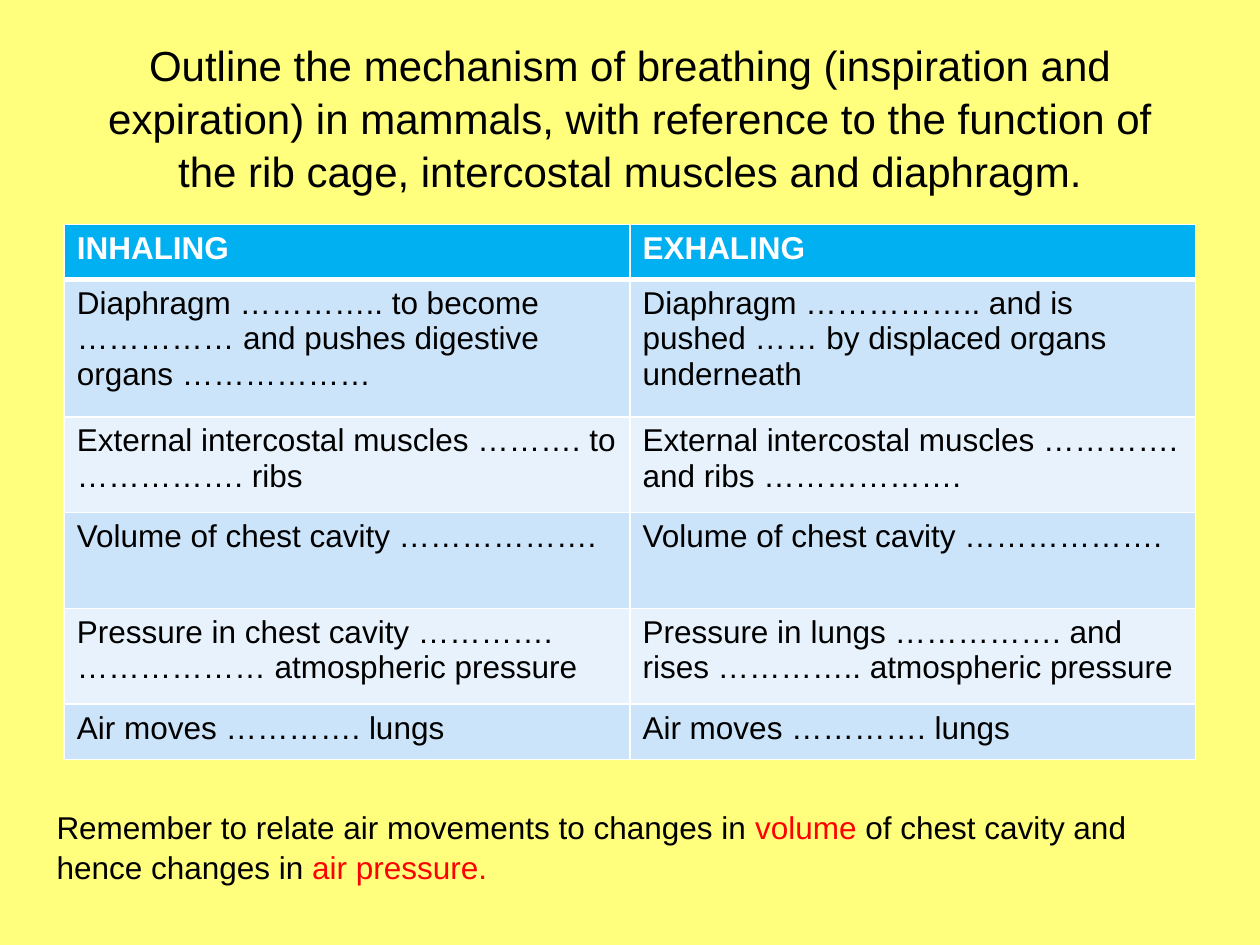
from dataclasses import dataclass
from typing import NamedTuple

from lxml.etree import SubElement as Sub
from pptx import Presentation
from pptx.dml.color import RGBColor as Rgb
from pptx.enum.text import MSO_ANCHOR as Anchor, MSO_AUTO_SIZE as Fit, PP_ALIGN as Align
from pptx.oxml.ns import qn
from pptx.util import Inches, Pt


@dataclass(frozen=True)
class Theme:
    font: str = "Arial"
    page: str = "FFFF7D"
    ink: str = "000000"
    mark: str = "FF0000"
    white: str = "FFFFFF"
    head: str = "00B0F0"
    bands: tuple = ("E7F2FC", "CCE4F9")
    title: int = 24
    body: int = 18
    lead: float = 1.05


class Row(NamedTuple):
    high: float
    left: str
    right: str


class Part(NamedTuple):
    text: str
    color: str


LOOK = Theme()
WIDE, HIGH = 10, 7.5

ROWS = [
    Row(0.44, "INHALING", "EXHALING"),
    Row(1.09, "Diaphragm ………….. to become …………… and pushes digestive organs ………………",
        "Diaphragm …………….. and is pushed …… by displaced organs underneath"),
    Row(0.76, "External intercostal muscles ………. to ……………. ribs",
        "External intercostal muscles …………. and ribs ………………."),
    Row(0.76, "Volume of chest cavity ……………….", "Volume of chest cavity ………………."),
    Row(0.76, "Pressure in chest cavity …………. ……………… atmospheric pressure",
        "Pressure in lungs ……………. and rises ………….. atmospheric pressure"),
    Row(0.44, "Air moves …………. lungs", "Air moves …………. lungs"),
]
NOTE = [
    Part("Remember to relate air movements to changes in ", LOOK.ink),
    Part("volume ", LOOK.mark),
    Part("of chest cavity and hence changes in ", LOOK.ink),
    Part("air pressure.", LOOK.mark),
]


def add_run(para, part: Part, size: int, bold: bool = False) -> None:
    run = para.add_run()
    run.text = part.text
    font = run.font
    font.name, font.size, font.bold = LOOK.font, Pt(size), bold
    font.color.rgb = Rgb.from_string(part.color)


def edge(cell, bottom: int) -> None:
    """Draw white borders; they must come before the fill is set."""
    props = cell._tc.get_or_add_tcPr()
    for side, width in zip("LRTB", (1, 1, 1, bottom)):
        line = Sub(props, qn(f"a:ln{side}"), w=str(Pt(width)))
        Sub(Sub(line, qn("a:solidFill")), qn("a:srgbClr"), val=LOOK.white)


def add_title(slide, text: str) -> None:
    shape = slide.shapes.title
    shape.left, shape.top = Inches(WIDE * 0.05), Inches(HIGH * 0.04)
    shape.width, shape.height = Inches(WIDE * 0.9), Inches(1.25)
    frame = shape.text_frame
    frame.word_wrap, frame.auto_size = True, Fit.NONE
    frame.vertical_anchor = Anchor.MIDDLE
    para = frame.paragraphs[0]
    para.alignment, para.line_spacing = Align.CENTER, LOOK.lead
    add_run(para, Part(text, LOOK.ink), LOOK.title)


def add_grid(slide, rows: list[Row]) -> None:
    side, top = 0.51, 1.78
    grid = slide.shapes.add_table(
        len(rows), 2, Inches(side), Inches(top), Inches(WIDE - 2 * side),
        Inches(sum(row.high for row in rows))).table
    for i, row in enumerate(rows):
        grid.rows[i].height = Inches(row.high)
        first = i == 0
        fill = LOOK.head if first else LOOK.bands[i % 2]
        ink = LOOK.white if first else LOOK.ink
        for j, text in enumerate((row.left, row.right)):
            cell = grid.cell(i, j)
            edge(cell, 3 if first else 1)
            cell.fill.solid()
            cell.fill.fore_color.rgb = Rgb.from_string(fill)
            add_run(cell.text_frame.paragraphs[0], Part(text, ink), LOOK.body, first)


def add_note(slide, parts: list[Part]) -> None:
    box = slide.shapes.add_textbox(Inches(0.35), Inches(6.35), Inches(9.21), Inches(0.71))
    frame = box.text_frame
    frame.word_wrap = True
    para = frame.paragraphs[0]
    para.line_spacing = LOOK.lead
    for part in parts:
        add_run(para, part, LOOK.body)


def main() -> None:
    deck = Presentation()
    deck.slide_width, deck.slide_height = Inches(WIDE), Inches(HIGH)
    slide = deck.slides.add_slide(deck.slide_layouts[5])

    # Page colour
    page = slide.background.fill
    page.solid()
    page.fore_color.rgb = Rgb.from_string(LOOK.page)

    # Question, comparison table and reminder
    add_title(slide, "Outline the mechanism of breathing (inspiration and expiration) in "
              "mammals, with reference to the function of the rib cage, intercostal "
              "muscles and diaphragm.")
    add_grid(slide, ROWS)
    add_note(slide, NOTE)
    deck.save("out.pptx")


if __name__ == "__main__":
    main()
